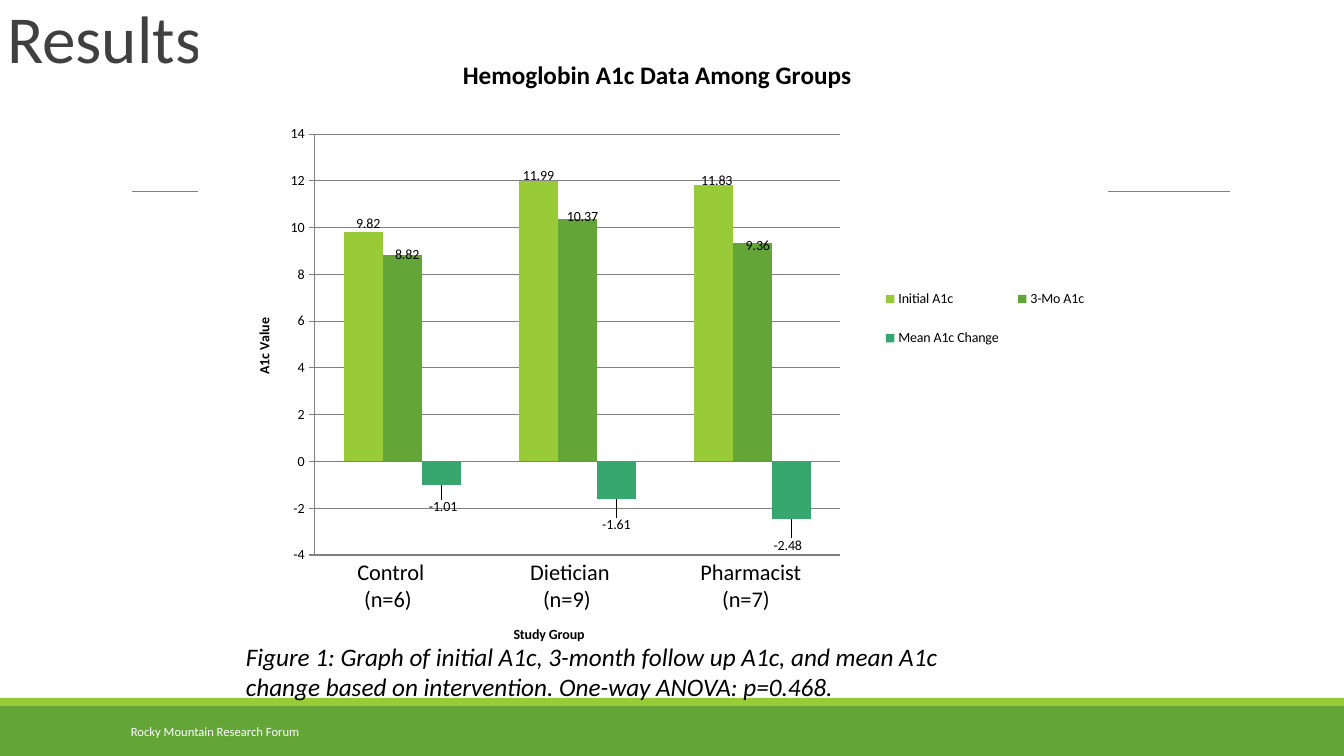
from dataclasses import dataclass

from lxml import etree
from pptx import Presentation
from pptx.chart.data import CategoryChartData
from pptx.dml.color import RGBColor
from pptx.enum.chart import XL_CHART_TYPE as CT, XL_LABEL_POSITION as LP
from pptx.enum.chart import XL_LEGEND_POSITION as LEGEND, XL_TICK_LABEL_POSITION as TLP
from pptx.enum.chart import XL_TICK_MARK as TICK
from pptx.enum.shapes import MSO_CONNECTOR, MSO_SHAPE
from pptx.enum.text import MSO_ANCHOR as ANCHOR, PP_ALIGN
from pptx.oxml import parse_xml
from pptx.oxml.ns import nsdecls, qn
from pptx.util import Emu, Pt

FONT = "Calibri"
BLACK = RGBColor(0, 0, 0)
WHITE = RGBColor(255, 255, 255)
DARK = RGBColor(0x40, 0x40, 0x40)
GRAY = RGBColor(0x80, 0x80, 0x80)
LIME = RGBColor(0x99, 0xCB, 0x38)
GREEN = RGBColor(0x63, 0xA5, 0x37)
TEAL = RGBColor(0x37, 0xA7, 0x6F)

EMU_PER_PX = 914400 / 100.8
SLIDE_W, SLIDE_H = 1344, 756


@dataclass
class Box:
    x: int
    y: int
    w: int
    h: int

    def emu(self) -> list[Emu]:
        return [px(v) for v in (self.x, self.y, self.w, self.h)]


@dataclass
class Series:
    name: str
    values: tuple
    color: RGBColor
    nudges: tuple  # label offsets in px, one (dx, dy) per group


@dataclass
class LabelRow:
    texts: tuple
    centers: tuple  # tab stops in px from the text edge


CHART = Box(198, 27, 910, 634)
BANDS = [(Box(0, 706, SLIDE_W, 50), GREEN), (Box(0, 698, SLIDE_W, 8), LIME)]
SERIES = [
    Series("Initial A1c", (9.82, 11.99, 11.83), LIME, ((5, 4), (0, 6), (3, 8))),
    Series("3-Mo A1c", (8.82, 10.37, 9.36), GREEN, ((5, 11), (5, 10), (5, 15))),
    Series("Mean A1c Change", (-1.01, -1.61, -2.48), TEAL, ((2, 10), (0, 14), (-4, 14))),
]
GROUP_ROWS = [
    LabelRow(("Control", "Dietician", "Pharmacist"), (61, 240, 421)),
    LabelRow(("(n=6)", "(n=9)", "(n=7)"), (58, 237, 416)),
]
# Chart part, the child its layout follows, and its place
CHART_PLACES = [
    (".//c:plotArea", None, dict(layoutTarget="inner", xMode="edge", yMode="edge",
                                 x=0.128, y=0.169, w=0.578, h=0.664)),
    (".//c:chart/c:title", "c:tx", dict(xMode="edge", yMode="edge", x=0.286, y=0.04)),
    (".//c:catAx/c:title", "c:tx", dict(xMode="edge", yMode="edge", x=0.344, y=0.94)),
    (".//c:valAx/c:title", "c:tx", dict(xMode="edge", yMode="edge", x=0.06, y=0.455)),
    (".//c:legend", "c:legendPos", dict(xMode="edge", yMode="edge",
                                        x=0.74, y=0.38, w=0.25, h=0.16)),
]


def px(value: int) -> Emu:
    return Emu(round(value * EMU_PER_PX))


def style_font(font, color: RGBColor = BLACK, **values) -> None:
    for name, value in {"name": FONT, **values}.items():
        setattr(font, name, value)
    font.color.rgb = color


def add_band(slide, box: Box, color: RGBColor) -> None:
    s = slide.shapes.add_shape(MSO_SHAPE.RECTANGLE, *box.emu())
    s.shadow.inherit = False
    s.fill.solid()
    s.fill.fore_color.rgb = color
    s.line.fill.background()


def add_rule(slide, x1: int, x2: int, y: int) -> None:
    s = slide.shapes.add_connector(MSO_CONNECTOR.STRAIGHT, px(x1), px(y), px(x2), px(y))
    s.line.color.rgb = GRAY
    s.line.width = Pt(0.5)
    etree.SubElement(s.element.spPr, qn("a:effectLst"))


def add_text(slide, box: Box, lines: list[str], size: int, color: RGBColor = BLACK,
             anchor=ANCHOR.TOP, **values):
    tf = slide.shapes.add_textbox(*box.emu()).text_frame
    tf.word_wrap = True
    tf.vertical_anchor = anchor
    for i, line in enumerate(lines):
        p = tf.add_paragraph() if i else tf.paragraphs[0]
        r = p.add_run()
        r.text = line
        style_font(r.font, color, size=Pt(size), **values)
    return tf


def set_title(slide) -> None:
    s = slide.shapes.title
    s.left, s.top, s.width, s.height = Box(-3, -78, 1109, 160).emu()
    tf = s.text_frame
    tf.vertical_anchor = ANCHOR.BOTTOM
    p = tf.paragraphs[0]
    p.alignment, p.line_spacing = PP_ALIGN.LEFT, 0.85
    r = p.add_run()
    r.text = "Results"
    style_font(r.font, DARK, size=Pt(48))
    r.font.element.set("spc", "-50") if hasattr(r.font, "element") else None


def set_layout(parent, after: str | None, values: dict) -> None:
    for old in parent.findall(qn("c:layout")):
        parent.remove(old)
    layout = parse_xml(f"<c:layout {nsdecls('c')}/>")
    manual = etree.SubElement(layout, qn("c:manualLayout"))
    for name, value in values.items():
        etree.SubElement(manual, qn(f"c:{name}")).set("val", str(value))
    if after:
        parent.find(qn(after)).addnext(layout)
    else:
        parent.insert(0, layout)


def set_chart_title(title, text: str, size: int) -> None:
    r = title.text_frame.paragraphs[0].add_run()
    r.text = text
    style_font(r.font, size=Pt(size), bold=True)


def add_results_chart(slide) -> None:
    data = CategoryChartData()
    data.categories = ["1", "2", "3"]
    for series in SERIES:
        data.add_series(series.name, series.values)
    chart = slide.shapes.add_chart(CT.COLUMN_CLUSTERED, *CHART.emu(), data).chart
    style_font(chart.font, size=Pt(10))
    chart.has_title = chart.has_legend = True
    set_chart_title(chart.chart_title, "Hemoglobin A1c Data Among Groups", 18)
    chart.legend.position = LEGEND.RIGHT
    chart.legend.include_in_layout = False

    # Axes
    cat, val = chart.category_axis, chart.value_axis
    set_chart_title(cat.axis_title, "Study Group", 10)
    set_chart_title(val.axis_title, "A1c Value", 10)
    cat.tick_label_position = TLP.NONE
    cat.major_tick_mark = TICK.NONE
    for name, value in dict(minimum_scale=-4, maximum_scale=14, major_unit=2,
                            major_tick_mark=TICK.OUTSIDE, has_major_gridlines=True).items():
        setattr(val, name, value)
    for line in (cat.format.line, val.format.line, val.major_gridlines.format.line):
        line.color.rgb = GRAY
        line.width = Pt(0.75)

    # Columns and their value labels
    plot = chart.plots[0]
    plot.gap_width, plot.overlap, plot.vary_by_categories = 150, 0, False
    for series, s in zip(SERIES, plot.series):
        s.invert_if_negative = False
        s.format.fill.solid()
        s.format.fill.fore_color.rgb = series.color
        s.data_labels.show_value = True
        s.data_labels.position = LP.OUTSIDE_END
        for i, (dx, dy) in enumerate(series.nudges):
            s.points[i].data_label.position = LP.OUTSIDE_END
            label = chart.element.xpath(f".//c:ser[c:idx/@val={s.index if hasattr(s, 'index') else SERIES.index(series)}]"
                                        f"//c:dLbl[c:idx/@val={i}]")[0]
            set_layout(label, "c:idx", dict(x=round(dx / CHART.w, 4), y=round(dy / CHART.h, 4)))

    # Places of the parts and white backdrop
    for xpath, after, values in CHART_PLACES:
        set_layout(chart.element.xpath(xpath)[0], after, values)
    chart.element.find(qn("c:chart")).addnext(parse_xml(
        f"<c:spPr {nsdecls('c', 'a')}><a:solidFill><a:srgbClr val='{WHITE}'/></a:solidFill>"
        "<a:ln><a:noFill/></a:ln></c:spPr>"))


def add_group_labels(slide) -> None:
    lines = ["".join(f"\t{t}" for t in row.texts) for row in GROUP_ROWS]
    tf = add_text(slide, Box(320, 553, 748, 72), lines, 16)
    for p, row in zip(tf.paragraphs, GROUP_ROWS):
        p.alignment = PP_ALIGN.LEFT
        tabs = etree.SubElement(p._p.get_or_add_pPr(), qn("a:tabLst"))
        for center in row.centers:
            tab = etree.SubElement(tabs, qn("a:tab"))
            tab.set("pos", str(px(center)))
            tab.set("algn", "ctr")


def main() -> None:
    prs = Presentation()
    prs.slide_width, prs.slide_height = px(SLIDE_W), px(SLIDE_H)
    slide = prs.slides.add_slide(prs.slide_layouts[5])
    for box, color in BANDS:
        add_band(slide, box, color)
    add_rule(slide, 132, 1230, 191)
    set_title(slide)
    add_text(slide, Box(121, 712, 272, 40), ["Rocky Mountain Research Forum"], 9, WHITE,
             ANCHOR.MIDDLE)
    add_results_chart(slide)
    add_group_labels(slide)
    add_text(slide, Box(236, 636, 759, 72),
             ["Figure 1: Graph of initial A1c, 3-month follow up A1c, and mean A1c change "
              "based on intervention. One-way ANOVA: p=0.468."], 18, italic=True)
    prs.save("out.pptx")


if __name__ == "__main__":
    main()
